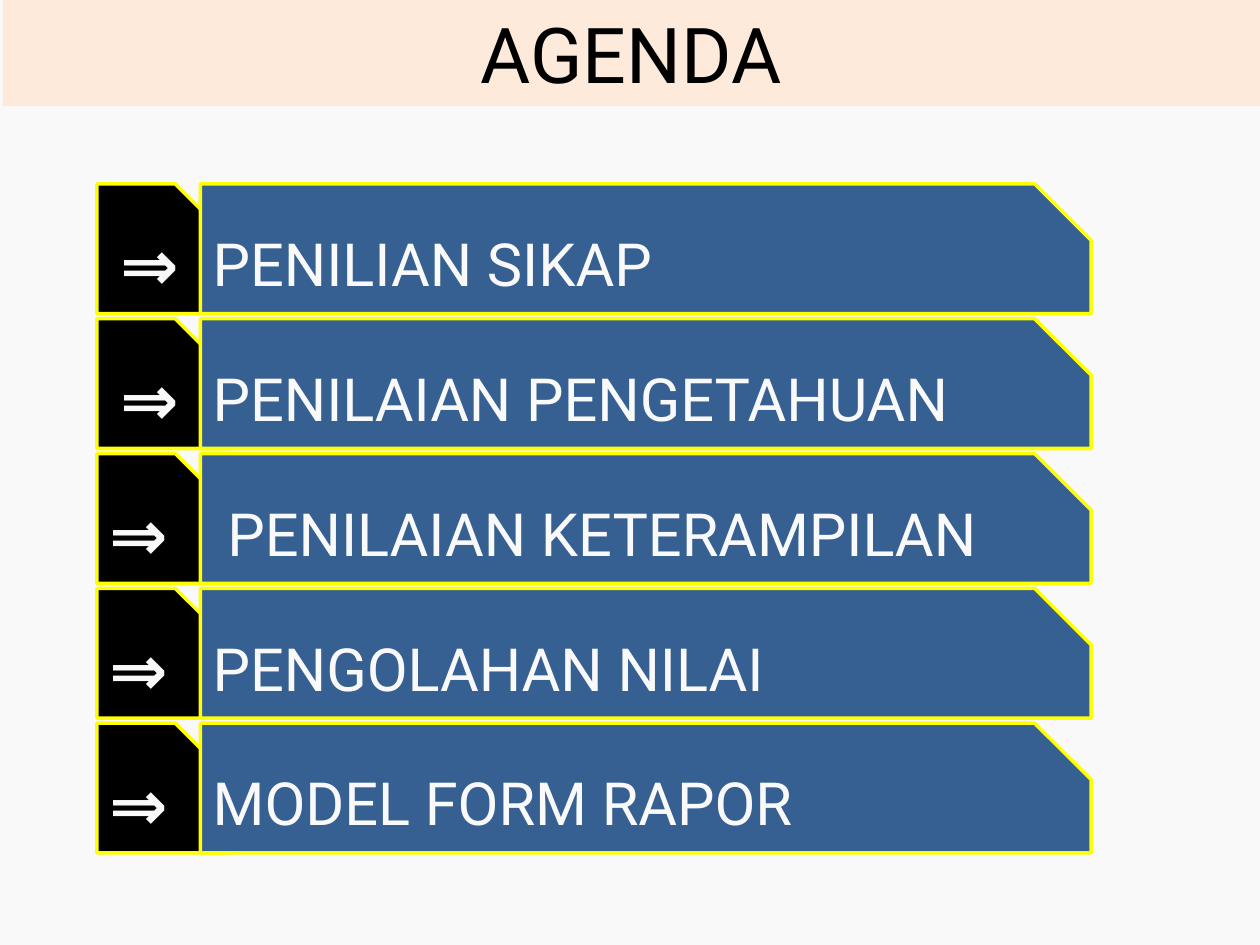
"""Build the agenda slide: a title band above five snipped bars with arrow tabs."""
from pptx import Presentation
from pptx.dml.color import RGBColor
from pptx.enum.shapes import MSO_SHAPE
from pptx.enum.text import MSO_ANCHOR, PP_ALIGN
from pptx.util import Inches, Pt

RECT, SNIP = MSO_SHAPE.RECTANGLE, MSO_SHAPE.SNIP_1_RECTANGLE
LEFT, CENTER = PP_ALIGN.LEFT, PP_ALIGN.CENTER
MIDDLE = MSO_ANCHOR.MIDDLE

TITLE = "AGENDA"
ARROW = "⇒"
ITEMS = [
    ("PENILIAN SIKAP", CENTER),
    ("PENILAIAN PENGETAHUAN", CENTER),
    (" PENILAIAN KETERAMPILAN", LEFT),
    ("PENGOLAHAN NILAI", LEFT),
    ("MODEL FORM RAPOR", LEFT),
]

THEME = {
    "font": "Roboto",
    "light": "F9F9F9",
    "dark": "000000",
    "band": "FDEADA",
    "bar": "376092",
    "outline": "FFFF00",
    "title_size": 44,
    "arrow_size": 40,
    "item_size": 34,
    "line_width": 2,
    "snip": 0.435,
}

TOP, PITCH, HEIGHT = 1.46, 1.07, 1.03
TAB_LEFT, TAB_WIDTH = 0.77, 1.07
BAR_LEFT, BAR_WIDTH = 1.59, 7.07


def color(name):
    return RGBColor.from_string(THEME[name])


def add_block(s, kind, box, fill, text, size, ink, align, bold=False):
    sp = s.shapes.add_shape(kind, *map(Inches, box))
    sp.shadow.inherit = False
    sp.fill.solid()
    sp.fill.fore_color.rgb = color(fill)
    if kind == SNIP:
        sp.adjustments[0] = THEME["snip"]
        sp.line.color.rgb = color("outline")
        sp.line.width = Pt(THEME["line_width"])
    else:
        sp.line.fill.background()
    tf = sp.text_frame
    tf.word_wrap = True
    tf.vertical_anchor = MIDDLE
    p = tf.paragraphs[0]
    p.alignment = align
    r = p.add_run()
    r.text = text
    r.font.name = THEME["font"]
    r.font.size = Pt(THEME[size])
    r.font.bold = bold
    r.font.color.rgb = color(ink)


def main():
    prs = Presentation()
    prs.slide_width, prs.slide_height = Inches(10), Inches(7.5)
    s = prs.slides.add_slide(prs.slide_layouts[6])
    s.background.fill.solid()
    s.background.fill.fore_color.rgb = color("light")

    add_block(s, RECT, (0.02, 0, 9.98, 0.84), "band", TITLE, "title_size", "dark", CENTER)
    for i, (label, arrow_align) in enumerate(ITEMS):
        top = TOP + i * PITCH
        add_block(s, SNIP, (TAB_LEFT, top, TAB_WIDTH, HEIGHT), "dark",
                  ARROW, "arrow_size", "light", arrow_align, bold=True)
        add_block(s, SNIP, (BAR_LEFT, top, BAR_WIDTH, HEIGHT), "bar",
                  label, "item_size", "light", LEFT)
    prs.save("out.pptx")


if __name__ == "__main__":
    main()
